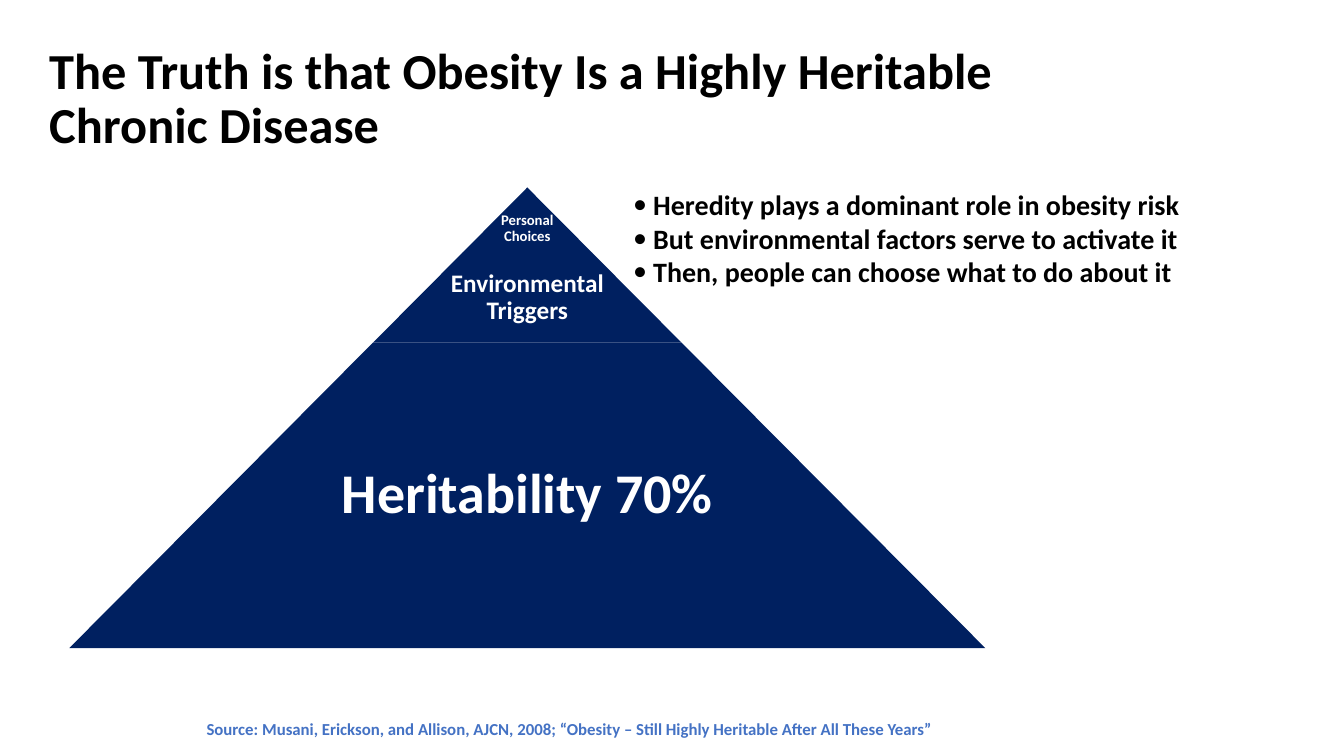
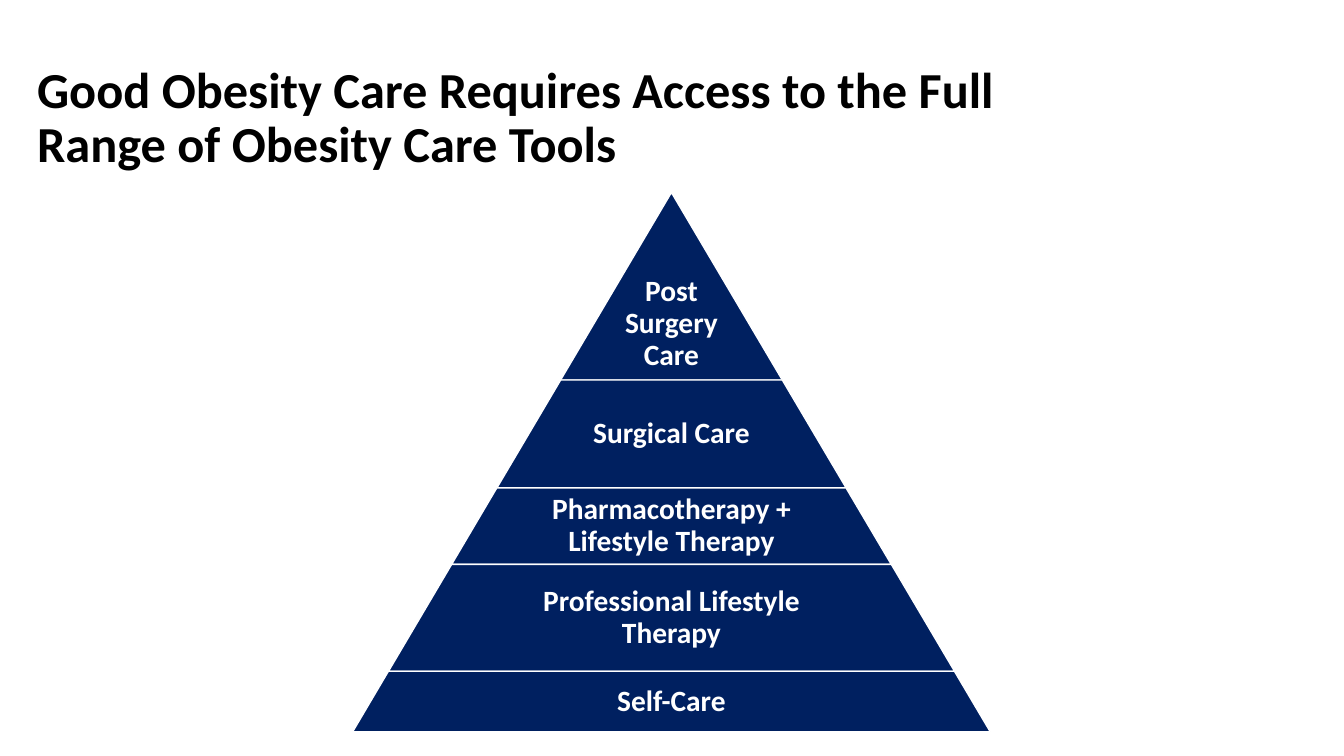
from lxml import etree
from pptx import Presentation, util as u
from pptx.dml.color import RGBColor
from pptx.enum import shapes, text
from pptx.oxml.ns import qn

PX = 9144  # EMU per px, 100 px to the inch
SLIDE_SIZE = 1333, 750
FONT = "Calibri"
BLACK = RGBColor(0x00, 0x00, 0x00)
WHITE = RGBColor(0xFF, 0xFF, 0xFF)
NAVY = RGBColor(0x00, 0x20, 0x60)
BLUE = RGBColor(0x44, 0x72, 0xC4)

# Content: each layer is (label, height, text size, inset, extra inset above)
SLIDES = [
    {
        "title": "The Truth is that Obesity Is a Highly Heritable\nChronic Disease",
        "title_at": (39, 27),
        "pyramid": {
            "apex": (523, 186), "slope": 0.994, "outline": None,
            "layers": [
                ("Personal\nChoices", 65, 10.5, 2, 16),
                ("Environmental Triggers", 89, 18, 3, 0),
                ("Heritability 70%", 303, 40, 6, 0),
            ],
        },
        "points": [
            "Heredity plays a dominant role in obesity risk",
            "But environmental factors serve to activate it",
            "Then, people can choose what to do about it",
        ],
        "source": "Source: Musani, Erickson, and Allison, AJCN, 2008; "
                  "“Obesity – Still Highly Heritable After All These Years”",
    },
    {
        "title": "Good Obesity Care Requires Access to the Full\n"
                 "Range of Obesity Care Tools",
        "title_at": (27, 46),
        "pyramid": {
            "apex": (666, 191), "slope": 0.591, "outline": WHITE,
            "layers": [
                ("Post\nSurgery\nCare", 186, 21, 3, 75),
                ("Surgical Care", 107, 21, 3, 0),
                ("Pharmacotherapy + Lifestyle Therapy", 76, 21, 3, 0),
                ("Professional Lifestyle Therapy", 106, 21, 3, 0),
                ("Self-Care", 60, 21, 3, 0),
            ],
        },
    },
]

# Shared styles and places
TITLE_SIZE = 1150, 145
POINTS_AT = 618, 181, 571, 111
SOURCE_AT = 195, 708, 1138, 30
BULLET_INDENT = 20
LABEL_SHARE = 0.65  # label width as a share of the layer width
TITLE = {"size": u.Pt(36), "color": BLACK, "line_spacing": 0.9}
POINT = {"size": u.Pt(20), "color": BLACK}
SOURCE = {"size": u.Pt(12), "color": BLUE}
LABEL = {"color": WHITE, "line_spacing": 0.9, "alignment": text.PP_ALIGN.CENTER}


def emu(*lengths):
    return [round(length * PX) for length in lengths]


def add_bullet(paragraph):
    props = paragraph._p.get_or_add_pPr()
    indent, = emu(BULLET_INDENT)
    props.set("marL", str(indent))
    props.set("indent", str(-indent))
    etree.SubElement(props, qn("a:buFont")).set("typeface", FONT)
    etree.SubElement(props, qn("a:buChar")).set("char", "•")


def add_text(parent, at, lines, style, insets=(10, 5, 10, 5),
             anchor=text.MSO_ANCHOR.TOP, bullets=False):
    frame = parent.add_textbox(*emu(*at)).text_frame
    left, top, right, bottom = emu(*insets)
    layout = {"word_wrap": True, "vertical_anchor": anchor, "margin_left": left,
              "margin_top": top, "margin_right": right, "margin_bottom": bottom}
    for key, value in layout.items():
        setattr(frame, key, value)
    for i, line in enumerate(lines):
        paragraph = frame.add_paragraph() if i else frame.paragraphs[0]
        paragraph.text = line
        if bullets:
            add_bullet(paragraph)
        for key in ("alignment", "line_spacing"):
            if key in style:
                setattr(paragraph, key, style[key])
        for run in paragraph.runs:
            run.font.name, run.font.bold = FONT, True
            run.font.size = style["size"]
            run.font.color.rgb = style["color"]


def add_pyramid(slide, apex, slope, outline, layers):
    """Stack trapezoids whose sides follow one slope down from the apex."""
    group = slide.shapes.add_group_shape().shapes
    center, apex_y = apex
    top = apex_y
    for label, height, size, inset, extra in layers:
        is_tip = top == apex_y
        width = 2 * slope * (top + height - apex_y)
        layer = group.add_shape(shapes.MSO_SHAPE.TRAPEZOID,
                                *emu(center - width / 2, top, width, height))
        layer.adjustments[0] = slope * height / min(width, height)
        layer.shadow.inherit = False
        layer.fill.solid()
        layer.fill.fore_color.rgb = NAVY
        if outline is None:
            layer.line.fill.background()
        else:
            layer.line.color.rgb = outline
            layer.line.width = u.Pt(1)

        label_width = width if is_tip else width * LABEL_SHARE
        add_text(group, (center - label_width / 2, top, label_width, height),
                 [label], {**LABEL, "size": u.Pt(size)},
                 (inset, inset + extra, inset, inset), text.MSO_ANCHOR.MIDDLE)
        top += height


def main():
    deck = Presentation()
    deck.slide_width, deck.slide_height = emu(*SLIDE_SIZE)
    for content in SLIDES:
        slide = deck.slides.add_slide(deck.slide_layouts[6])
        add_text(slide.shapes, content["title_at"] + TITLE_SIZE, [content["title"]],
                 TITLE, anchor=text.MSO_ANCHOR.MIDDLE)
        add_pyramid(slide, **content["pyramid"])
        if "points" in content:
            add_text(slide.shapes, POINTS_AT, content["points"], POINT, bullets=True)
        if "source" in content:
            add_text(slide.shapes, SOURCE_AT, [content["source"]], SOURCE)
    deck.save("out.pptx")


if __name__ == "__main__":
    main()
